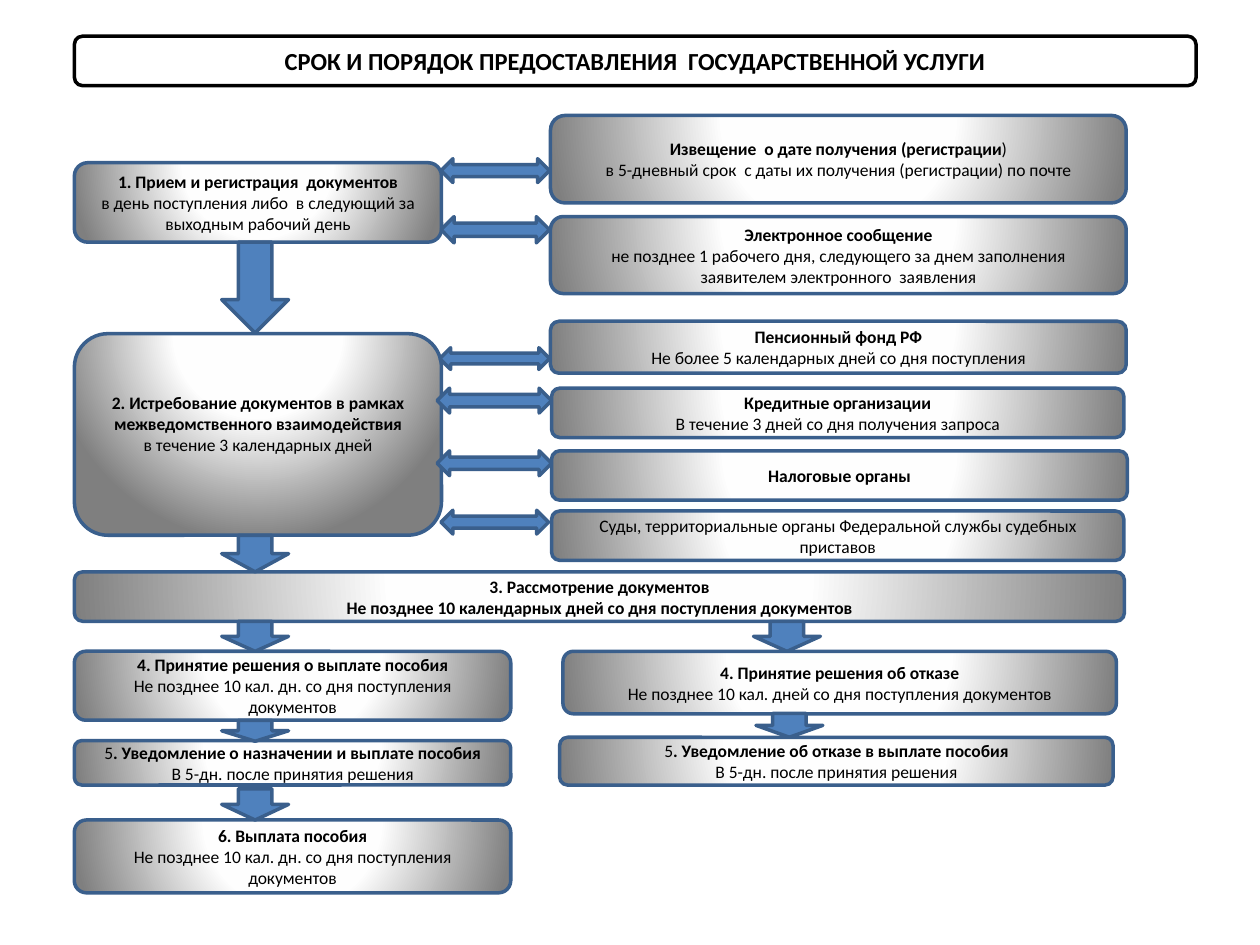
"""Build a flow chart of the terms and order of a state service."""
import pptx
import pptx.dml.color
import pptx.enum.shapes
import pptx.enum.text
import pptx.oxml
import pptx.oxml.ns
import pptx.util

Pt = pptx.util.Pt
Kind = pptx.enum.shapes.MSO_SHAPE
Align = pptx.enum.text.PP_ALIGN
Anchor = pptx.enum.text.MSO_ANCHOR
BLUE, EDGE, BLACK, WHITE = "4F81BD", "3A5F8C", "000000", "FFFFFF"
STOPS = [(0, WHITE), (40, "FEFEFE"), (100, "7F7F7F")]
GRAD = (
    f'<a:gradFill {pptx.oxml.ns.nsdecls("a")} rotWithShape="1"><a:gsLst>'
    + "".join(f'<a:gs pos="{pos * 1000}"><a:srgbClr val="{tone}"/></a:gs>' for pos, tone in STOPS)
    + '</a:gsLst><a:path path="circle">'
    '<a:fillToRect l="50000" t="-80000" r="50000" b="180000"/></a:path></a:gradFill>'
)


def color(code):
    return pptx.dml.color.RGBColor.from_string(code)


def draw(kind, area, fill, edge, text="", size=10):
    shape = slide.shapes.add_shape(kind, *map(Pt, area))
    shape.shadow.inherit = False
    if fill:
        shape.fill.solid()
        shape.fill.fore_color.rgb = color(fill)
    else:
        shape._element.spPr.insert(2, pptx.oxml.parse_xml(GRAD))
    shape.line.color.rgb = color(edge)
    shape.line.width = Pt(2)
    frame = shape.text_frame
    frame.word_wrap = True
    frame.vertical_anchor = Anchor.MIDDLE
    for row, line in enumerate(text.split("\n") if text else []):
        para = frame.add_paragraph() if row else frame.paragraphs[0]
        para.alignment = Align.CENTER
        for part, words in enumerate(line.split("*")):
            if words:
                run = para.add_run()
                run.text = words
                look = {"name": "Calibri", "size": Pt(size), "bold": part % 2 == 1}
                for key, value in look.items():
                    setattr(run.font, key, value)
                run.font.color.rgb = color(BLACK)
    return shape


deck = pptx.Presentation()
deck.slide_width, deck.slide_height = Pt(720), Pt(540)
slide = deck.slides.add_slide(deck.slide_layouts[6])

LEFT, RIGHT = 42.5, 314.6
TERM = "Не позднее 10 кал. дн. со дня поступления документов"
NOTICE = "В 5-дн. после принятия решения"

draw(Kind.ROUNDED_RECTANGLE, (LEFT, 20.7, 641, 28.3), WHITE, BLACK,
     "*СРОК И ПОРЯДОК ПРЕДОСТАВЛЕНИЯ  ГОСУДАРСТВЕННОЙ УСЛУГИ*", 14)

request = draw(
    Kind.ROUNDED_RECTANGLE, (LEFT, 190.7, 209.8, 115.2), None, EDGE,
    "*2. Истребование документов в рамках межведомственного взаимодействия*\n"
    "в течение 3 календарных дней")
request.text_frame.margin_bottom = Pt(15.6)

boxes = [
    (LEFT, 93, 209.8, 45.4, "*1. Прием и регистрация  документов*\n"
     "в день поступления либо  в следующий за выходным рабочий день"),
    (RIGHT, 66, 329, 50, "*Извещение  о дате получения (регистрации*)\n"
     "в 5-дневный срок  с даты их получения (регистрации) по почте"),
    (RIGHT, 123.8, 329, 44, "*Электронное сообщение*\n"
     "не позднее 1 рабочего дня, следующего за днем заполнения "
     "заявителем электронного  заявления"),
    (RIGHT, 183.6, 329, 29.7, "*Пенсионный фонд РФ*\n"
     "Не более 5 календарных дней со дня поступления"),
    (315.2, 221.8, 327, 28.2, "*Кредитные организации*\n"
     "В течение 3 дней со дня получения запроса"),
    (315.2, 257.6, 329, 28.2, "*Налоговые органы*"),
    (315.2, 292, 327, 28.2,
     "Суды, территориальные органы Федеральной службы судебных приставов"),
    (LEFT, 326.8, 600, 28.2, "*3. Рассмотрение документов*\n"
     "*Не позднее 10 календарных дней со дня поступления документов*"),
    (LEFT, 372.2, 249.4, 39.4, "*4. Принятие решения о выплате пособия*\n" + TERM),
    (LEFT, 423.2, 249.4, 25.4,
     "5*. Уведомление о назначении и выплате пособия*\n" + NOTICE),
    (LEFT, 468.6, 249.4, 41.6, "*6. Выплата пособия*\n" + TERM),
    (321.7, 372.2, 316.2, 35.7, "*4. Принятие решения об отказе*\n"
     "Не позднее 10 кал. дней со дня поступления документов"),
    (319.8, 421.3, 316.2, 27.3,
     "5*. Уведомление об отказе в выплате пособия*\n" + NOTICE),
]
for *area, text in boxes:
    draw(Kind.ROUNDED_RECTANGLE, area, None, EDGE, text)

links = [(252, 90.7, 62, 13.6), (252, 123.8, 62, 15), (251.3, 198.7, 62.8, 12.4),
         (249.8, 221.8, 65.4, 14.2), (249.8, 257.6, 65.4, 14.2), (252, 291.6, 61.5, 13.6)]
for area in links:
    draw(Kind.LEFT_RIGHT_ARROW, area, BLUE, EDGE)

steps = [(126.7, 138.4, 52), (126.7, 306, 20.8), (126.7, 355, 17.2), (126.7, 411.6, 12),
         (126.7, 450.7, 17.9), (430.6, 355, 17.2), (432, 407.7, 13.6)]
for left, top, height in steps:
    draw(Kind.DOWN_ARROW, (left, top, 38.2, height), BLUE, EDGE)

deck.save("out.pptx")
